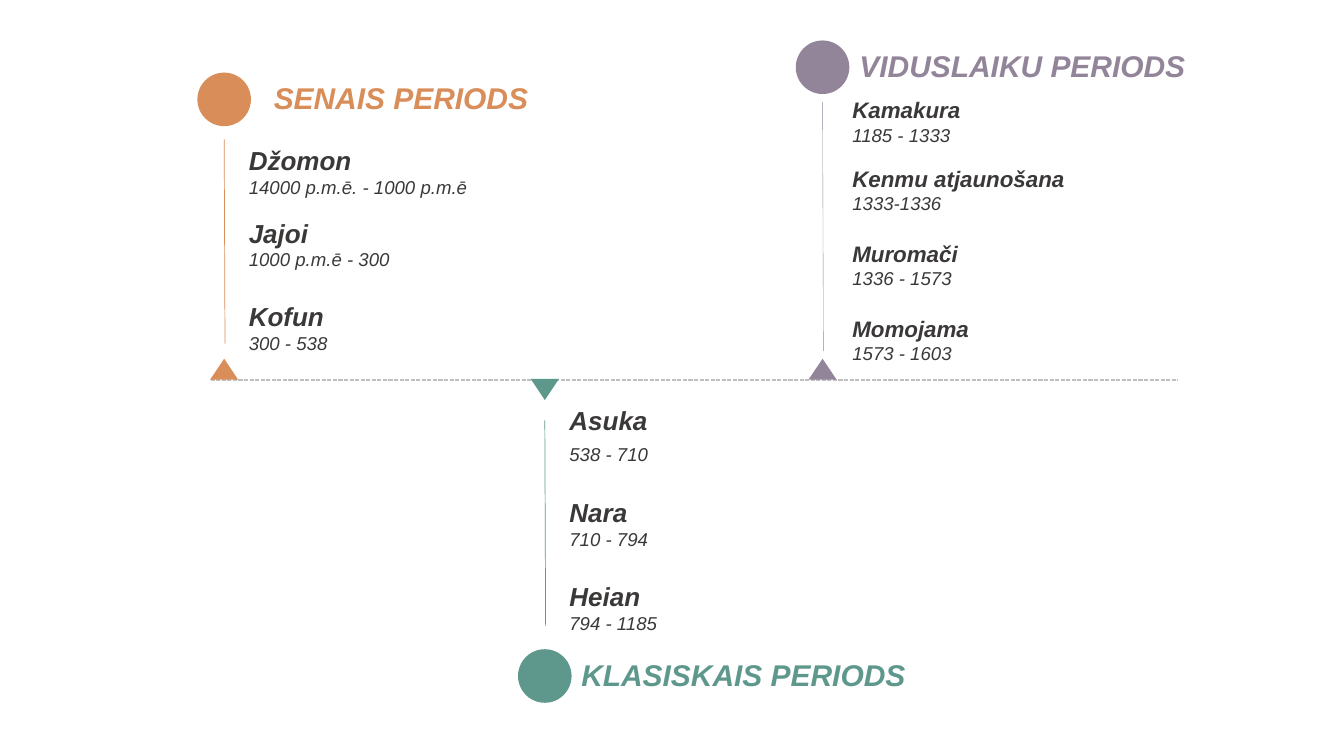
import pptx
import pptx.util
import pptx.dml.color
import pptx.enum.dml
import pptx.enum.shapes
import pptx.oxml
from pptx.util import Cm, Pt

COLORS = {
    "ancient": "D98D59",
    "classical": "5E988C",
    "medieval": "928599",
    "axis": "BFBFBF",
    "text": "3B3838",
}
MSO_SHAPE = pptx.enum.shapes.MSO_SHAPE
DOT = 1.35
ARROW_W, ARROW_H = 0.71, 0.53

PERIODS = [
    {
        "color": "ancient", "name": "SENAIS PERIODS", "size": 18.6,
        "x": 5.65, "dot_y": 1.83, "arrow_y": 9.04, "flip": 0,
        "line": (3.51, 8.66, 0.5),
        "head": (6.65, 1.88, 8.18), "list": (6.02, 3.51, 6.71, 6.48),
        "eras": [
            ("Džomon", "14000 p.m.ē. - 1000 p.m.ē", 0, 0),
            ("Jajoi", "1000 p.m.ē - 300", 13.8, 0),
            ("Kofun", "300 - 538", 21.4, 0),
        ],
    },
    {
        "color": "classical", "name": "KLASISKAIS PERIODS", "size": 18.6,
        "x": 13.73, "dot_y": 16.36, "arrow_y": 9.55, "flip": 180,
        "line": (10.59, 15.77, 0.5),
        "head": (14.4, 16.41, 8.84), "list": (14.1, 10.08, 4.62, 6.17),
        "eras": [
            ("Asuka", "538 - 710", 0, 4.8),
            ("Nara", "710 - 794", 22.5, 0),
            ("Heian", "794 - 1185", 21.4, 0),
        ],
    },
    {
        "color": "medieval", "name": "VIDUSLAIKU PERIODS", "size": 16,
        "x": 20.73, "dot_y": 1.02, "arrow_y": 9.04, "flip": 0,
        "line": (2.57, 8.84, 0.25),
        "head": (21.41, 1.07, 11), "list": (21.23, 2.31, 7.37, 7.16),
        "eras": [
            ("Kamakura", "1185 - 1333", 0, 0),
            ("Kenmu atjaunošana", "1333-1336", 13.8, 0),
            ("Muromači", "1336 - 1573", 18.4, 0),
            ("Momojama", "1573 - 1603", 18.4, 0),
        ],
    },
]


def add_line(x1, y1, x2, y2, color, width):
    c = s.shapes.add_connector(
        pptx.enum.shapes.MSO_CONNECTOR.STRAIGHT, Cm(x1), Cm(y1), Cm(x2), Cm(y2))
    c.line.color.rgb = pptx.dml.color.RGBColor.from_string(COLORS[color])
    c.line.width = Pt(width)
    c._element.spPr.append(pptx.oxml.parse_xml(
        '<a:effectLst xmlns:a="http://schemas.openxmlformats.org/drawingml/2006/main"/>'))
    return c


def add_run(p, text, size, color, bold):
    r = p.add_run()
    r.text = text
    r.font.name = "Arial"
    r.font.size = Pt(size)
    r.font.bold = bold
    r.font.italic = True
    r.font.color.rgb = pptx.dml.color.RGBColor.from_string(COLORS[color])


prs = pptx.Presentation()
prs.slide_width, prs.slide_height = Cm(33.87), Cm(19.05)
s = prs.slides.add_slide(prs.slide_layouts[6])

axis = add_line(5.31, 9.58, 29.67, 9.58, "axis", 1)
axis.line.dash_style = pptx.enum.dml.MSO_LINE.SQUARE_DOT

for period in PERIODS:
    x, color = period["x"], period["color"]
    top, bottom, width = period["line"]
    add_line(x, top, x + 0.02, bottom, color, width)

    for kind, y, w, h, turn in (
        (MSO_SHAPE.ISOSCELES_TRIANGLE, period["arrow_y"], ARROW_W, ARROW_H, period["flip"]),
        (MSO_SHAPE.OVAL, period["dot_y"], DOT, DOT, 0),
    ):
        sp = s.shapes.add_shape(kind, Cm(x - w / 2), Cm(y), Cm(w), Cm(h))
        sp.rotation = turn
        sp.shadow.inherit = False
        sp.fill.solid()
        sp.fill.fore_color.rgb = pptx.dml.color.RGBColor.from_string(COLORS[color])
        sp.line.fill.background()

    left, top, width = period["head"]
    tf = s.shapes.add_textbox(Cm(left), Cm(top), Cm(width), Cm(1.17)).text_frame
    tf.word_wrap = True
    add_run(tf.paragraphs[0], period["name"], 21.4, color, True)

    tf = s.shapes.add_textbox(*[Cm(v) for v in period["list"]]).text_frame
    tf.word_wrap = True
    p = tf.paragraphs[0]
    for i, (era, years, gap, years_gap) in enumerate(period["eras"]):
        if i:
            p = tf.add_paragraph()
        p.space_before = Pt(gap)
        add_run(p, era, period["size"], "text", True)
        p = tf.add_paragraph()
        p.space_before = Pt(years_gap)
        add_run(p, years, 13.3, "text", False)

prs.save("out.pptx")
